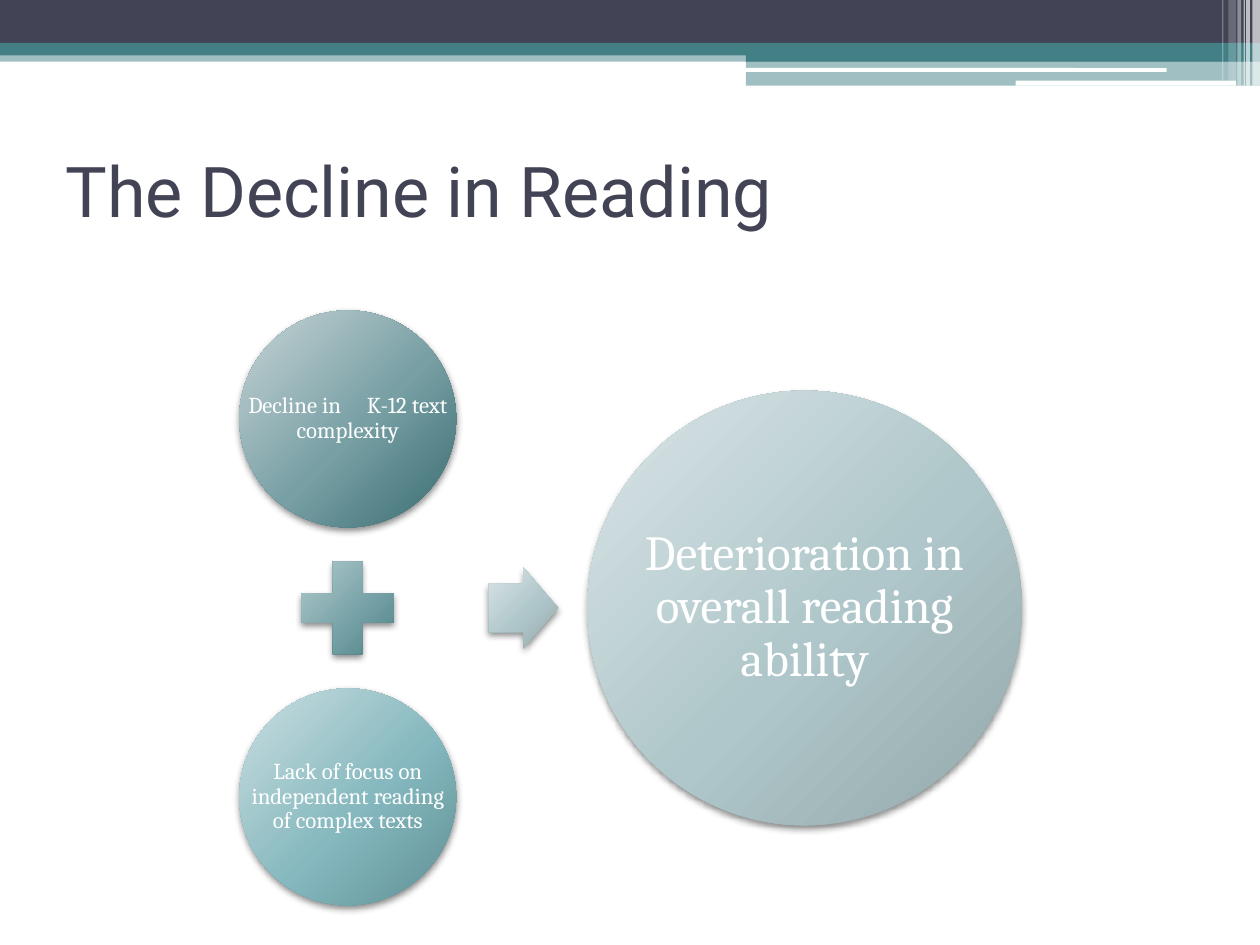
from dataclasses import dataclass

from pptx import Presentation
from pptx.dml.color import RGBColor
from pptx.enum.shapes import MSO_SHAPE as SHAPE
from pptx.enum.text import MSO_ANCHOR as ANCHOR, PP_ALIGN as ALIGN
from pptx.oxml import parse_xml
from pptx.oxml.ns import nsdecls, qn
from pptx.oxml.xmlchemy import OxmlElement
from pptx.util import Pt

COLORS = {"navy": "424456", "teal": "438086", "white": "FFFFFF", "black": "000000"}
GRADIENTS = {
    "deep": ("C7D4D6", "779FA4", "396C71"),
    "plus": ("C7D6D8", "77A3A8", "3C7277"),
    "aqua": ("CBDEE1", "86B9BF", "5F9095"),
    "pale": ("DAE4E6", "AFC7CA", "93A7AA"),
}
STOPS = (0, 55, 100)
MID_Y = 347.4      # centre line of the diagram
CAUSE_X = 198.72   # centre of the column of causes
CAUSE_GAP = 108    # from the centre line to each cause


@dataclass
class Bar:
    x: float
    y: float
    w: float
    h: float
    color: str
    opacity: int = 100
    kind: SHAPE = SHAPE.RECTANGLE


@dataclass
class Node:
    kind: SHAPE
    cx: float
    cy: float
    w: float
    h: float
    gradient: str
    words: tuple = ()
    size: float = 13
    inset: float = 1.44


def stripe(x: float, w: float, h: float, opacity: int) -> Bar:
    return Bar(x, 0, w, h, "white", opacity)


BARS = [
    Bar(0, 28.8, 720, 6.48, "teal", 50),
    Bar(0, 0, 720, 24.48, "navy"),
    Bar(0, 24.48, 720, 7.2, "teal"),
    Bar(426.24, 28.08, 293.76, 7.2, "teal"),
    Bar(426.24, 34.56, 293.76, 14.4, "teal", 50),
    Bar(425.52, 38.88, 241.2, 2.16, "white", kind=SHAPE.ROUNDED_RECTANGLE),
    Bar(580.32, 46.08, 126, 2.88, "white", kind=SHAPE.ROUNDED_RECTANGLE),
    stripe(715.68, 4.32, 48.96, 65),
    stripe(712.08, 2.16, 48.96, 65),
    stripe(710.64, 0.72, 48.96, 60),
    stripe(707.04, 2.16, 48.96, 40),
    stripe(702, 4.32, 46.08, 20),
    stripe(698.4, 0.72, 46.08, 30),
]
NODES = [
    Node(SHAPE.OVAL, CAUSE_X, MID_Y - CAUSE_GAP, 124, 124, "deep",
         ("Decline in", "K-12 text complexity")),
    Node(SHAPE.MATH_PLUS, CAUSE_X, MID_Y, 72, 72, "plus"),
    Node(SHAPE.OVAL, CAUSE_X, MID_Y + CAUSE_GAP, 124, 124, "aqua",
         ("Lack of focus on independent reading of complex texts",)),
    Node(SHAPE.RIGHT_ARROW, 299.16, MID_Y, 39.6, 46.08, "pale"),
    Node(SHAPE.OVAL, 459.72, MID_Y, 248.4, 248.4, "pale",
         ("Deterioration in overall reading ability",), 28, 2.88),
]


def rgb(name: str) -> RGBColor:
    return RGBColor.from_string(COLORS[name])


def set_all(obj, values: dict) -> None:
    for name, value in values.items():
        setattr(obj, name, value)


def add_bar(shapes, bar: Bar) -> None:
    s = shapes.add_shape(bar.kind, Pt(bar.x), Pt(bar.y), Pt(bar.w), Pt(bar.h))
    s.shadow.inherit = False
    s.line.fill.background()
    s.fill.solid()
    s.fill.fore_color.rgb = rgb(bar.color)
    if bar.opacity < 100:
        alpha = OxmlElement("a:alpha")
        alpha.set("val", str(bar.opacity * 1000))
        s._element.spPr.find(".//" + qn("a:srgbClr")).append(alpha)


def set_gradient(s, colors: tuple) -> None:
    stops = "".join(
        f'<a:gs pos="{pos * 1000}"><a:srgbClr val="{color}"/></a:gs>'
        for pos, color in zip(STOPS, colors))
    s.fill.gradient()
    spPr = s._element.spPr
    spPr.replace(spPr.find(qn("a:gradFill")), parse_xml(
        f'<a:gradFill {nsdecls("a")} rotWithShape="1"><a:gsLst>{stops}</a:gsLst>'
        '<a:path path="circle"><a:fillToRect l="-40000" t="-90000" r="140000" '
        'b="190000"/></a:path></a:gradFill>'))


def set_shadow(s) -> None:
    s.shadow.inherit = False
    s._element.spPr.find(qn("a:effectLst")).append(parse_xml(
        f'<a:outerShdw {nsdecls("a")} blurRad="{Pt(4)}" dist="{Pt(2)}" '
        f'dir="5400000" rotWithShape="0"><a:srgbClr val="{COLORS["black"]}">'
        '<a:alpha val="45000"/></a:srgbClr></a:outerShdw>'))


def add_label(shapes, node: Node, box: tuple) -> None:
    tf = shapes.add_textbox(*box).text_frame
    set_all(tf, {"word_wrap": True, "vertical_anchor": ANCHOR.MIDDLE})
    set_all(tf, {f"margin_{side}": Pt(node.inset)
                 for side in ("left", "top", "right", "bottom")})
    p = tf.paragraphs[0]
    set_all(p, {"alignment": ALIGN.CENTER, "line_spacing": 0.9})
    for i, words in enumerate(node.words):
        # A widely tracked space separates the parts of a label
        for text in ([" "] if i else []) + [words]:
            r = p.add_run()
            r.text = text
            set_all(r.font, {"name": "Cambria", "size": Pt(node.size)})
            r.font.color.rgb = rgb("white")
            if text == " ":
                r.font._element.set("spc", "1200")


def add_node(shapes, node: Node) -> None:
    box = (Pt(node.cx - node.w / 2), Pt(node.cy - node.h / 2), Pt(node.w), Pt(node.h))
    s = shapes.add_shape(node.kind, *box)
    if node.kind == SHAPE.RIGHT_ARROW:
        s.adjustments[0] = 0.6
    set_gradient(s, GRADIENTS[node.gradient])
    s.line.fill.background()
    set_shadow(s)
    if node.words:
        add_label(shapes, node, box)


def add_title(shapes, text: str) -> None:
    s = shapes.title
    set_all(s, {"left": Pt(30.24), "top": Pt(66.24), "width": Pt(648), "height": Pt(84.24)})
    tf = s.text_frame
    tf.vertical_anchor = ANCHOR.MIDDLE
    p = tf.paragraphs[0]
    p.alignment = ALIGN.LEFT
    r = p.add_run()
    r.text = text
    set_all(r.font, {"name": "Roboto", "size": Pt(40)})
    r.font.color.rgb = rgb("navy")


def main() -> None:
    prs = Presentation()
    set_all(prs, {"slide_width": Pt(720), "slide_height": Pt(540)})
    shapes = prs.slides.add_slide(prs.slide_layouts[5]).shapes

    # Header band
    for bar in BARS:
        add_bar(shapes, bar)

    add_title(shapes, "The Decline in Reading")

    # Causes, plus sign, arrow and result
    for node in NODES:
        add_node(shapes, node)

    prs.save("out.pptx")


if __name__ == "__main__":
    main()
